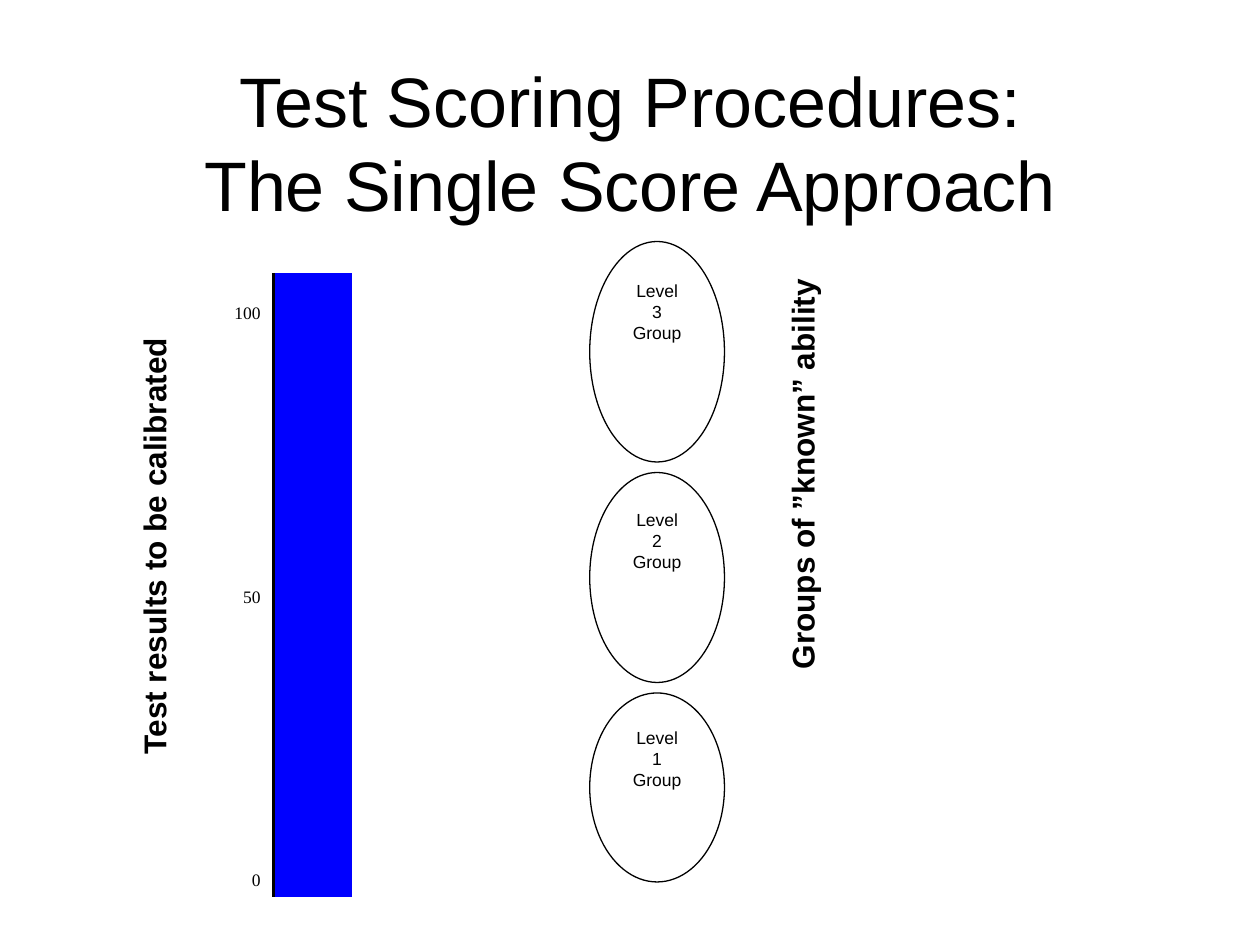
from dataclasses import dataclass

from lxml import etree
from pptx import Presentation
from pptx.dml.color import RGBColor
from pptx.enum.shapes import MSO_SHAPE
from pptx.enum.text import MSO_ANCHOR, MSO_AUTO_SIZE, PP_ALIGN
from pptx.oxml.ns import qn
from pptx.util import Pt

OVAL = MSO_SHAPE.OVAL
TOP, MIDDLE, BOTTOM = MSO_ANCHOR.TOP, MSO_ANCHOR.MIDDLE, MSO_ANCHOR.BOTTOM
LEFT, CENTER, RIGHT = PP_ALIGN.LEFT, PP_ALIGN.CENTER, PP_ALIGN.RIGHT
FIXED, GROW = MSO_AUTO_SIZE.NONE, MSO_AUTO_SIZE.SHAPE_TO_FIT_TEXT
NO_GRID_STYLE = "{2D5ABB26-0587-4C30-8999-92F81FD0307C}"


@dataclass(frozen=True)
class Theme:
    ink: RGBColor = RGBColor(0, 0, 0)
    paper: RGBColor = RGBColor(255, 255, 255)
    bar: RGBColor = RGBColor(0, 0, 255)
    sans: str = "Arial"
    serif: str = "Times New Roman"
    title: int = 40
    axis: int = 18
    label: int = 10


THEME = Theme()
TITLE_FONT = {"name": THEME.sans, "size": Pt(THEME.title)}
AXIS_FONT = {"name": THEME.sans, "size": Pt(THEME.axis), "bold": True}
GROUP_FONT = {"name": THEME.sans, "size": Pt(THEME.label)}
SCALE_FONT = {"name": THEME.serif, "size": Pt(THEME.label)}


def write(tf, text, font, align):
    p = tf.paragraphs[0]
    p.text = text
    p.alignment = align
    for r in p.runs:
        for name, value in font.items():
            setattr(r.font, name, value)
        r.font.color.rgb = THEME.ink


def place(sp, box):
    for name, value in zip(("left", "top", "width", "height"), box):
        setattr(sp, name, Pt(value))


def add_title(s, box, text):
    sp = s.shapes.title
    place(sp, box)
    tf = sp.text_frame
    tf.auto_size = FIXED
    tf.vertical_anchor = MIDDLE
    write(tf, text, TITLE_FONT, CENTER)


def set_borders(cell, line_side):
    """Draw a 2 pt line on one side of the cell and none on the others."""
    tc_pr = cell._tc.get_or_add_tcPr()
    for i, side in enumerate(("lnL", "lnR", "lnT", "lnB")):
        ln = etree.Element(qn(f"a:{side}"))
        if side == line_side:
            ln.set("w", str(Pt(2)))
            fill = etree.SubElement(ln, qn("a:solidFill"))
            etree.SubElement(fill, qn("a:srgbClr"), val=str(THEME.ink))
        else:
            etree.SubElement(ln, qn("a:noFill"))
        tc_pr.insert(i, ln)


def add_score_scale(s, box, row_count, marks):
    frame = s.shapes.add_table(row_count, 2, *map(Pt, box))
    table = frame.table
    table.first_row = table.horz_banding = False
    table._tbl.tblPr.find(qn("a:tableStyleId")).text = NO_GRID_STYLE
    for col in table.columns:
        col.width = Pt(box[2] / 2)
    for i, row in enumerate(table.rows):
        row.height = Pt(box[3] / row_count)
        label, bar = row.cells
        label.fill.background()
        bar.fill.solid()
        bar.fill.fore_color.rgb = THEME.bar
        set_borders(label, "lnR")
        set_borders(bar, "lnL")
        if i in marks:
            label.vertical_anchor = BOTTOM
            write(label.text_frame, marks[i], SCALE_FONT, RIGHT)


def add_level_groups(s, box, gap, heights):
    """Stack one ellipse per level, the highest level first."""
    left, top, width = box
    for i, height in enumerate(heights):
        sp = s.shapes.add_shape(OVAL, Pt(left), Pt(top), Pt(width), Pt(height))
        sp.shadow.inherit = False
        sp.fill.solid()
        sp.fill.fore_color.rgb = THEME.paper
        sp.line.color.rgb = THEME.ink
        sp.line.width = Pt(0.75)
        sp.text_frame.vertical_anchor = TOP
        write(sp.text_frame, f"Level\v{len(heights) - i}\vGroup", GROUP_FONT, CENTER)
        top += height + gap


def add_axis_title(s, box, text, wrap):
    """Add a label that reads from bottom to top."""
    sp = s.shapes.add_textbox(*map(Pt, box))
    sp.rotation = 180
    tf = sp.text_frame
    tf.word_wrap = wrap
    tf.auto_size = GROW
    tf._txBody.bodyPr.set("vert", "eaVert")
    write(tf, text, AXIS_FONT, LEFT)


def main():
    prs = Presentation()
    prs.slide_width, prs.slide_height = Pt(720), Pt(540)
    s = prs.slides.add_slide(prs.slide_layouts[5])
    add_title(s, (54, 24, 612, 114),
              "Test Scoring Procedures:\vThe Single Score Approach")
    add_score_scale(s, (110.8, 156, 90.6, 356.4), 11, {0: "100", 5: "50", 10: "0"})
    add_level_groups(s, (337, 138, 77), 6, (126, 120, 108))
    add_axis_title(s, (73.5, 186, 36, 252), "Test results to be calibrated", True)
    add_axis_title(s, (444, 157, 36.7, 232.6), "Groups of ”known” ability", False)
    prs.save("out.pptx")


if __name__ == "__main__":
    main()
